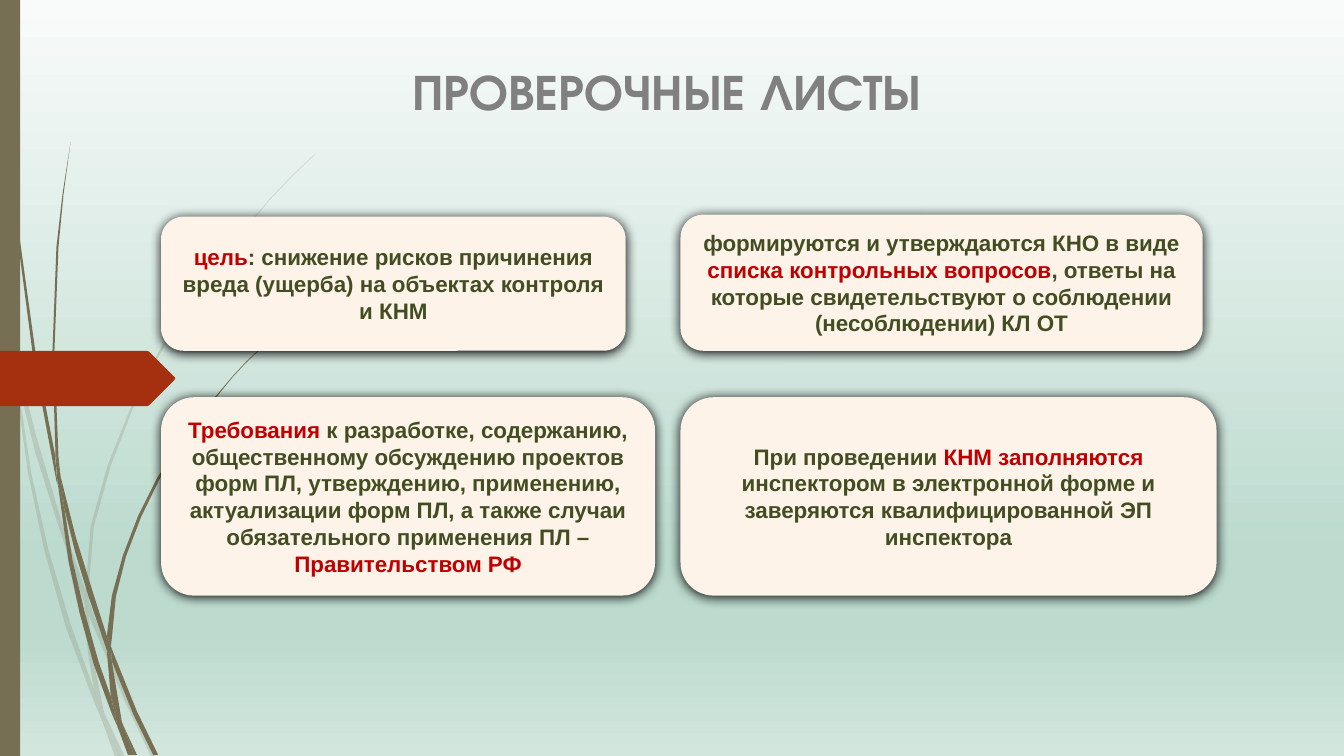
import lxml.etree
import pptx
import pptx.dml.color
import pptx.enum.shapes
import pptx.enum.text
import pptx.oxml.ns
import pptx.util
from pptx.util import Cm

COLORS = {
    "stem": "766F54", "arrow": "A53010", "card": "FDF3E9", "title": "808080",
    "accent": "C00000", "body": "424D22", "shadow": "000000",
}
BACKDROP = [(0, "F8FBFA"), (74, "BCDACE"), (83, "BCDACE"), (100, "D2E6DE")]
HUNDREDTH_INCH = Cm(2.54) / 100

FADED_BLADES = [
    [(11, 350), (9, 322), (0, 282), (0, 299), (10, 344)],
    [(58, 522), (84, 599), (85, 586), (62, 520), (36, 433), (14, 345), (17, 376), (35, 449)],
    [(92, 607), (88, 596), (88, 610), (123, 694), (150, 751), (155, 751), (127, 692)],
    [(119, 751), (124, 751), (105, 711)],
    [(93, 683), (70, 619), (48, 545), (31, 469), (17, 376), (11, 350), (28, 470), (44, 546),
     (65, 621), (92, 693), (101, 714), (99, 707)],
    [(84, 599), (87, 646), (93, 683), (96, 692), (105, 711), (103, 706), (91, 646), (88, 610),
     (88, 608)],
    [(88, 584), (93, 523), (110, 462), (132, 405), (160, 349), (193, 296), (229, 245),
     (268, 198), (290, 175), (312, 154), (312, 153), (289, 175), (268, 197), (228, 244),
     (191, 295), (158, 348), (130, 404), (107, 461), (90, 522), (85, 584), (85, 586), (88, 596)],
    [(101, 714), (114, 751), (119, 751)],
    [(88, 608), (88, 596), (85, 586), (84, 599)],
    [(96, 692), (93, 683), (99, 707), (101, 714), (119, 751), (105, 711)],
]
SOLID_BLADES = [
    [(7, 110), (17, 233), (33, 355), (56, 477), (57, 481), (55, 457), (55, 453), (36, 355),
     (19, 232), (8, 109), (5, 48), (4, 0), (3, 0), (4, 48)],
    [(88, 592), (106, 645), (106, 631), (93, 590), (75, 532), (60, 472), (64, 505), (75, 549)],
    [(113, 649), (110, 641), (111, 656), (132, 708), (152, 749), (157, 749), (136, 706)],
    [(110, 691), (98, 657), (84, 607), (72, 556), (64, 505), (57, 477), (68, 557), (79, 608),
     (93, 659), (111, 708), (117, 722), (116, 717)],
    [(60, 472), (58, 453), (54, 349), (58, 245), (63, 193), (70, 141), (62, 193), (56, 245),
     (52, 349), (55, 449)],
    [(133, 749), (136, 749), (122, 719)],
    [(57, 477), (64, 505), (60, 472), (55, 449), (55, 453)],
    [(111, 633), (115, 592), (125, 552), (140, 513), (158, 476), (180, 440), (205, 406),
     (231, 374), (245, 359), (261, 344), (260, 344), (245, 358), (231, 373), (204, 405),
     (179, 439), (156, 474), (137, 512), (122, 551), (111, 591), (106, 631), (110, 641)],
    [(117, 722), (127, 749), (131, 749)],
    [(106, 645), (110, 691), (116, 706), (122, 719), (121, 716), (111, 656), (109, 651)],
    [(106, 645), (109, 651), (111, 656), (110, 641), (106, 631)],
    [(116, 706), (110, 691), (116, 717), (117, 722), (130, 749), (133, 749), (122, 719)],
]
ARROW = [(173, 377), (148, 402), (146, 403), (0, 403), (0, 348), (146, 348), (148, 349),
         (173, 374), (174, 375)]

CARDS = [
    ((4.06, 5.46, 11.71, 3.38), [
        ("цель", "accent"),
        (": снижение рисков причинения вреда (ущерба) на объектах контроля и КНМ", "body")]),
    ((4.06, 10.01, 12.45, 5), [
        ("Требования", "accent"),
        (" к разработке, содержанию, общественному обсуждению проектов форм ПЛ, "
         "утверждению, применению, актуализации форм ПЛ, а также случаи "
         "обязательного применения ПЛ – ", "body"),
        ("Правительством РФ", "accent")]),
    ((17.15, 5.41, 13.16, 3.43), [
        ("формируются и утверждаются КНО в виде ", "body"),
        ("списка контрольных вопросов", "accent"),
        (", ответы на которые свидетельствуют о соблюдении (несоблюдении) КЛ ОТ", "body")]),
    ((17.15, 10.01, 13.51, 5), [
        ("При проведении ", "body"),
        ("КНМ заполняются ", "accent"),
        ("инспектором в электронной форме и заверяются квалифицированной ЭП инспектора",
         "body")]),
]


def rgb(name):
    """Return the named colour."""
    return pptx.dml.color.RGBColor.from_string(COLORS[name])


def add_xml(parent, tag, **attributes):
    """Append a drawing element with its attributes."""
    return lxml.etree.SubElement(parent, pptx.oxml.ns.qn(tag), attributes)


def paint_backdrop(slide):
    """Fill the slide background with a vertical gradient."""
    fill = slide.background.fill
    fill.gradient()
    fill.gradient_angle = 270
    stops = slide.element.find(".//" + pptx.oxml.ns.qn("a:gsLst"))
    stops.clear()
    for position, color in BACKDROP:
        stop = add_xml(stops, "a:gs", pos=str(position * 1000))
        add_xml(stop, "a:srgbClr", val=color)


def paint(shape, color):
    """Give a shape a plain fill without line or shadow."""
    shape.shadow.inherit = False
    shape.fill.solid()
    shape.fill.fore_color.rgb = rgb(color)
    shape.line.fill.background()


def add_outline(slide, points, color, opacity=100):
    """Draw a closed outline given in hundredths of an inch."""
    builder = slide.shapes.build_freeform(*points[0], scale=HUNDREDTH_INCH)
    builder.add_line_segments(points[1:], close=True)
    outline = builder.convert_to_shape()
    paint(outline, color)
    if opacity < 100:
        tint = outline.element.spPr.find(".//" + pptx.oxml.ns.qn("a:srgbClr"))
        add_xml(tint, "a:alpha", val=str(opacity * 1000))


def write(shape, runs, font, size):
    """Write centred bold runs into a shape."""
    frame = shape.text_frame
    frame.word_wrap = True
    frame.vertical_anchor = pptx.enum.text.MSO_ANCHOR.MIDDLE
    paragraph = frame.paragraphs[0]
    paragraph.alignment = pptx.enum.text.PP_ALIGN.CENTER
    for text, color in runs:
        run = paragraph.add_run()
        run.text = text
        run.font.name = font
        run.font.size = pptx.util.Pt(size)
        run.font.bold = True
        run.font.color.rgb = rgb(color)


def add_card(slide, bounds, runs):
    """Add a rounded card with a soft shadow."""
    rounded = pptx.enum.shapes.MSO_SHAPE.ROUNDED_RECTANGLE
    card = slide.shapes.add_shape(rounded, *map(Cm, bounds))
    paint(card, "card")
    effects = card.element.spPr.find(pptx.oxml.ns.qn("a:effectLst"))
    shadow = add_xml(effects, "a:outerShdw", blurRad=str(pptx.util.Pt(8.5)),
                     dist=str(pptx.util.Pt(1)), dir="5400000", rotWithShape="0")
    add_xml(shadow, "a:srgbClr", val=COLORS["shadow"])
    write(card, runs, "Arial", 16)


def main():
    """Build the slide about checklists."""
    deck = pptx.Presentation()
    deck.slide_width, deck.slide_height = Cm(33.87), Cm(19.05)
    slide = deck.slides.add_slide(deck.slide_layouts[6])
    paint_backdrop(slide)
    for blade in FADED_BLADES:
        add_outline(slide, blade, "stem", 20)
    for blade in SOLID_BLADES:
        add_outline(slide, blade, "stem")
    edge = slide.shapes.add_shape(
        pptx.enum.shapes.MSO_SHAPE.RECTANGLE, 0, 0, Cm(0.51), deck.slide_height)
    paint(edge, "stem")
    add_outline(slide, ARROW, "arrow")
    title = slide.shapes.add_textbox(Cm(2.69), Cm(0.61), Cm(28.24), Cm(3.33))
    write(title, [("ПРОВЕРОЧНЫЕ ЛИСТЫ", "title")], "TeX Gyre Adventor", 36)
    for bounds, runs in CARDS:
        add_card(slide, bounds, runs)
    deck.save("out.pptx")


if __name__ == "__main__":
    main()
